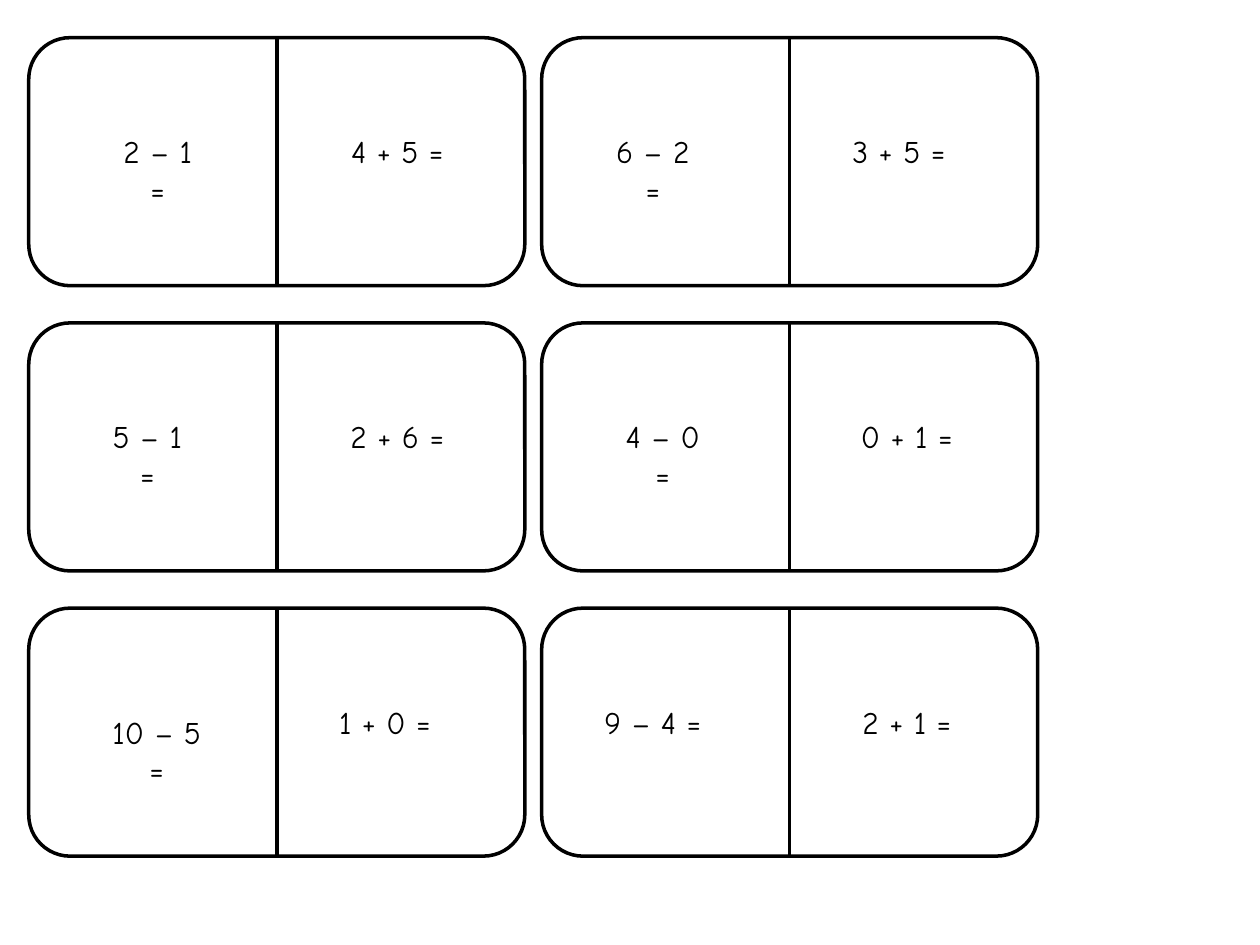
from lxml import etree
from pptx import Presentation
from pptx import util as u
from pptx.dml.color import RGBColor
from pptx.enum import shapes, text
from pptx.oxml.ns import qn

COLORS = {"ink": "000000"}
FONT = "Comic Neue"
NARROW, MEDIUM, WIDE = 2.34, 2.54, 2.7

# Each sum: wording, centre from the card's left, box width, top from the card's top
CARDS = [
    [
        [("2 – 1 =", 2.6, NARROW, 1.78), ("4 + 5 =", 7.43, MEDIUM, 1.78)],
        [("6 – 2 =", 2.24, NARROW, 1.78), ("3 + 5 =", 7.2, MEDIUM, 1.78)],
    ],
    [
        [("5 – 1 =", 2.39, NARROW, 1.78), ("2 + 6 =", 7.43, MEDIUM, 1.78)],
        [("4 – 0 =", 2.44, NARROW, 1.78), ("0 + 1 =", 7.36, MEDIUM, 1.78)],
    ],
    [
        [("10 – 5 =", 2.58, WIDE, 1.98), ("1 + 0 =", 7.18, MEDIUM, 1.78)],
        [("9 – 4 =", 2.24, MEDIUM, 1.78), ("2 + 1 =", 7.36, MEDIUM, 1.78)],
    ],
]

LEFT, TOP = 0.58, 0.76
CARD_WIDTH, CARD_HEIGHT = 10, 5
COLUMN_STEP, ROW_STEP = 10.34, 5.75


def style_line(line):
    line.color.rgb = RGBColor.from_string(COLORS["ink"])
    line.width = u.Pt(2)


def add_card(slide, left, top):
    group = slide.shapes.add_group_shape()
    card = group.shapes.add_shape(
        shapes.MSO_SHAPE.ROUNDED_RECTANGLE,
        u.Cm(left), u.Cm(top), u.Cm(CARD_WIDTH), u.Cm(CARD_HEIGHT),
    )
    card.shadow.inherit = False
    card.fill.background()
    style_line(card.line)

    middle = u.Cm(left + CARD_WIDTH / 2)
    divider = group.shapes.add_connector(
        shapes.MSO_CONNECTOR.STRAIGHT,
        middle, u.Cm(top), middle, u.Cm(top + CARD_HEIGHT),
    )
    divider.begin_connect(card, 0)
    divider.end_connect(card, 2)
    style_line(divider.line)
    etree.SubElement(divider._element.spPr, qn("a:effectLst"))


def add_text(slide, wording, *, left, top, width, height=1.02, size=18, color="ink"):
    box = slide.shapes.add_textbox(u.Cm(left), u.Cm(top), u.Cm(width), u.Cm(height))
    frame = box.text_frame
    frame.word_wrap = True
    frame.auto_size = text.MSO_AUTO_SIZE.SHAPE_TO_FIT_TEXT
    paragraph = frame.paragraphs[0]
    paragraph.alignment = text.PP_ALIGN.CENTER
    run = paragraph.add_run()
    run.text = wording
    run.font.name = FONT
    run.font.size = u.Pt(size)
    run.font.color.rgb = RGBColor.from_string(COLORS[color])


def main():
    presentation = Presentation()
    presentation.slide_width = u.Cm(25.4)
    presentation.slide_height = u.Cm(19.05)
    slide = presentation.slides.add_slide(presentation.slide_layouts[6])

    for row, cards in enumerate(CARDS):
        for column, sums in enumerate(cards):
            left = LEFT + column * COLUMN_STEP
            top = TOP + row * ROW_STEP
            add_card(slide, left, top)
            for wording, center, width, drop in sums:
                add_text(slide, wording, left=left + center - width / 2,
                         top=top + drop, width=width)

    presentation.save("out.pptx")


if __name__ == "__main__":
    main()
